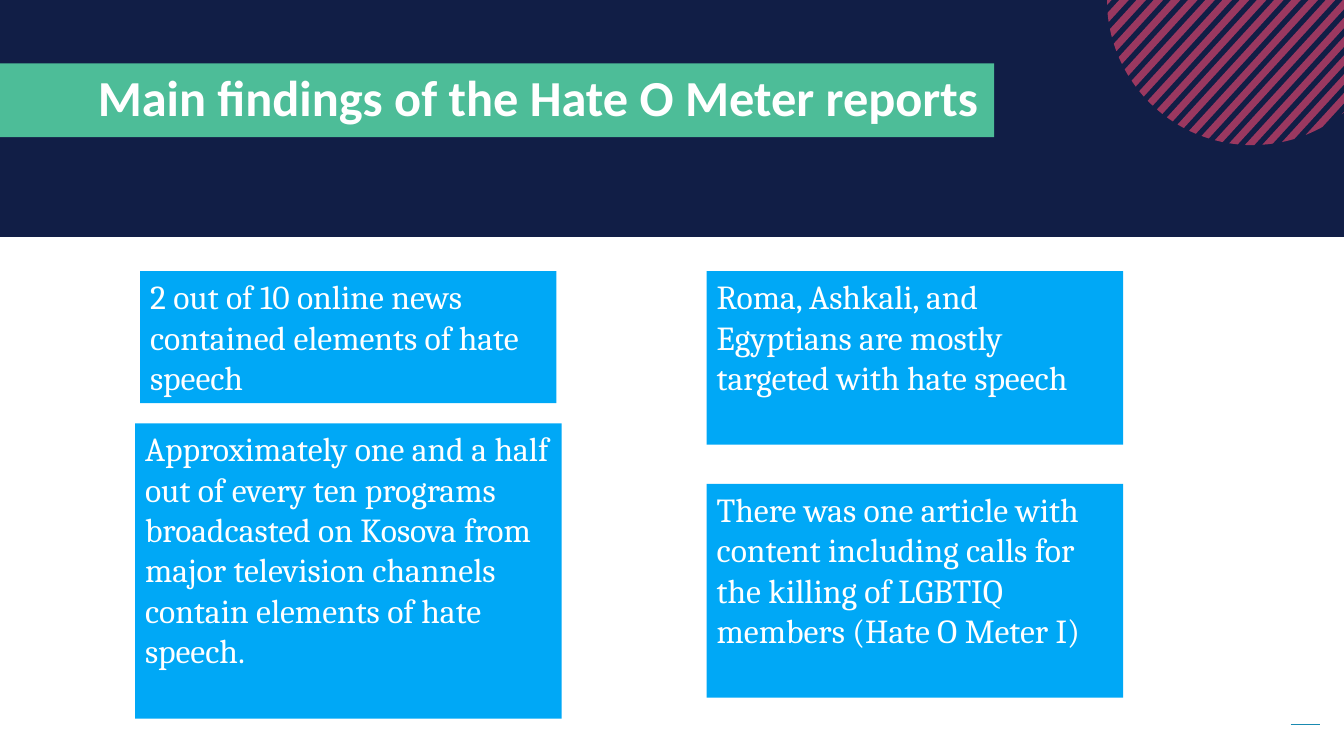
from dataclasses import dataclass
from math import acos, cos, radians, sin

from lxml.etree import SubElement
from pptx import Presentation
from pptx.dml.color import RGBColor
from pptx.enum.shapes import MSO_CONNECTOR as Connector
from pptx.enum.shapes import MSO_SHAPE as Preset
from pptx.enum.text import MSO_ANCHOR as Anchor
from pptx.enum.text import MSO_AUTO_SIZE as AutoSize
from pptx.enum.text import PP_ALIGN as Align
from pptx.oxml.ns import qn
from pptx.util import Inches, Pt

NAVY = RGBColor(0x11, 0x1E, 0x46)
GREEN = RGBColor(0x4D, 0xBD, 0x98)
PINK = RGBColor(0xEF, 0x48, 0x70)
BLUE = RGBColor(0x00, 0xA8, 0xF6)
TEAL = RGBColor(0x19, 0x8A, 0xB1)
WHITE = RGBColor(0xFF, 0xFF, 0xFF)

CIRCLE_X, CIRCLE_Y, RADIUS = 12.42, 0.0, 1.44
STRIPE_COUNT = 21
FIRST_OFFSET, STRIPE_STEP, STRIPE_WIDTH = -1.1, 0.126, 0.07
STRIPE_NORMAL = radians(42.4)
ARC_STEPS = 8


@dataclass
class Finding:
    text: str
    left: float
    top: float
    width: float
    height: float


FINDINGS = [
    Finding("2 out of 10 online news contained elements of hate speech",
            1.39, 2.69, 4.13, 1.31),
    Finding("Roma, Ashkali, and Egyptians are mostly targeted with hate speech",
            7.01, 2.69, 4.13, 1.72),
    Finding("Approximately one and a half out of every ten programs broadcasted on "
            "Kosova from major television channels contain elements of hate speech.",
            1.34, 4.2, 4.23, 2.93),
    Finding("There was one article with content including calls for the killing of "
            "LGBTIQ members (Hate O Meter I)",
            7.01, 4.8, 4.13, 2.12),
]


def add_rectangle(page, left: float, top: float, width: float, height: float,
                  color: RGBColor):
    box = page.shapes.add_shape(Preset.RECTANGLE, Inches(left), Inches(top),
                                Inches(width), Inches(height))
    box.shadow.inherit = False
    box.fill.solid()
    box.fill.fore_color.rgb = color
    box.line.fill.background()
    return box


def write_text(box, text: str, font_name: str, size: float, bold: bool = False):
    frame = box.text_frame
    frame.text = text
    frame.word_wrap = True
    frame.auto_size = AutoSize.NONE
    para = frame.paragraphs[0]
    para.alignment = Align.LEFT
    font = para.runs[0].font
    font.name = font_name
    font.size = Pt(size)
    font.bold = bold
    font.color.rgb = WHITE
    return para


def add_title(page) -> None:
    title = page.shapes.title
    title.left, title.top = Inches(-0.01), Inches(0.63)
    title.width, title.height = Inches(9.87), Inches(0.73)
    title.fill.solid()
    title.fill.fore_color.rgb = GREEN
    para = write_text(title, "Main findings of the Hate O Meter reports",
                      "Calibri", 36, bold=True)
    para.line_spacing = Pt(37.7)
    title.text_frame.margin_left = Inches(0.98)
    title.text_frame.vertical_anchor = Anchor.MIDDLE


def stripe_outline(near: float, far: float) -> list[tuple[int, int]]:
    start, end = acos(near / RADIUS), acos(far / RADIUS)
    arc = [start + (end - start) * step / ARC_STEPS for step in range(ARC_STEPS + 1)]
    angles = arc + [-angle for angle in reversed(arc)]
    return [(Inches(CIRCLE_X + RADIUS * cos(STRIPE_NORMAL + angle)),
             Inches(CIRCLE_Y + RADIUS * sin(STRIPE_NORMAL + angle)))
            for angle in angles]


def add_striped_circle(page) -> None:
    circle = page.shapes.add_group_shape()
    for index in range(STRIPE_COUNT):
        near = FIRST_OFFSET + index * STRIPE_STEP
        points = stripe_outline(near, min(near + STRIPE_WIDTH, RADIUS))
        builder = circle.shapes.build_freeform(*points[0], scale=1.0)
        builder.add_line_segments(points[1:], close=True)
        stripe = builder.convert_to_shape()
        stripe.shadow.inherit = False
        stripe.fill.solid()
        stripe.fill.fore_color.rgb = PINK
        stripe.line.fill.background()
        color = stripe.element.spPr.find(qn("a:solidFill"))[0]
        SubElement(color, qn("a:alpha")).set("val", "62000")


def add_corner_line(page) -> None:
    line = page.shapes.add_connector(Connector.STRAIGHT, Inches(12.8), Inches(7.19),
                                     Inches(13.09), Inches(7.19))
    line.line.color.rgb = TEAL
    line.line.width = Pt(0.5)
    SubElement(line.element.spPr, qn("a:effectLst"))


def add_finding(page, finding: Finding) -> None:
    box = add_rectangle(page, finding.left, finding.top, finding.width,
                        finding.height, BLUE)
    write_text(box, finding.text, "Cambria", 24)
    box.text_frame.vertical_anchor = Anchor.TOP


def main() -> None:
    deck = Presentation()
    deck.slide_width, deck.slide_height = Inches(13.33), Inches(7.5)
    page = deck.slides.add_slide(deck.slide_layouts[5])
    add_corner_line(page)
    header = add_rectangle(page, -0.02, 0, 13.35, 2.35, NAVY)
    page.shapes.title.element.addprevious(header.element)
    add_title(page)
    add_striped_circle(page)
    for finding in FINDINGS:
        add_finding(page, finding)
    deck.save("out.pptx")


if __name__ == "__main__":
    main()
